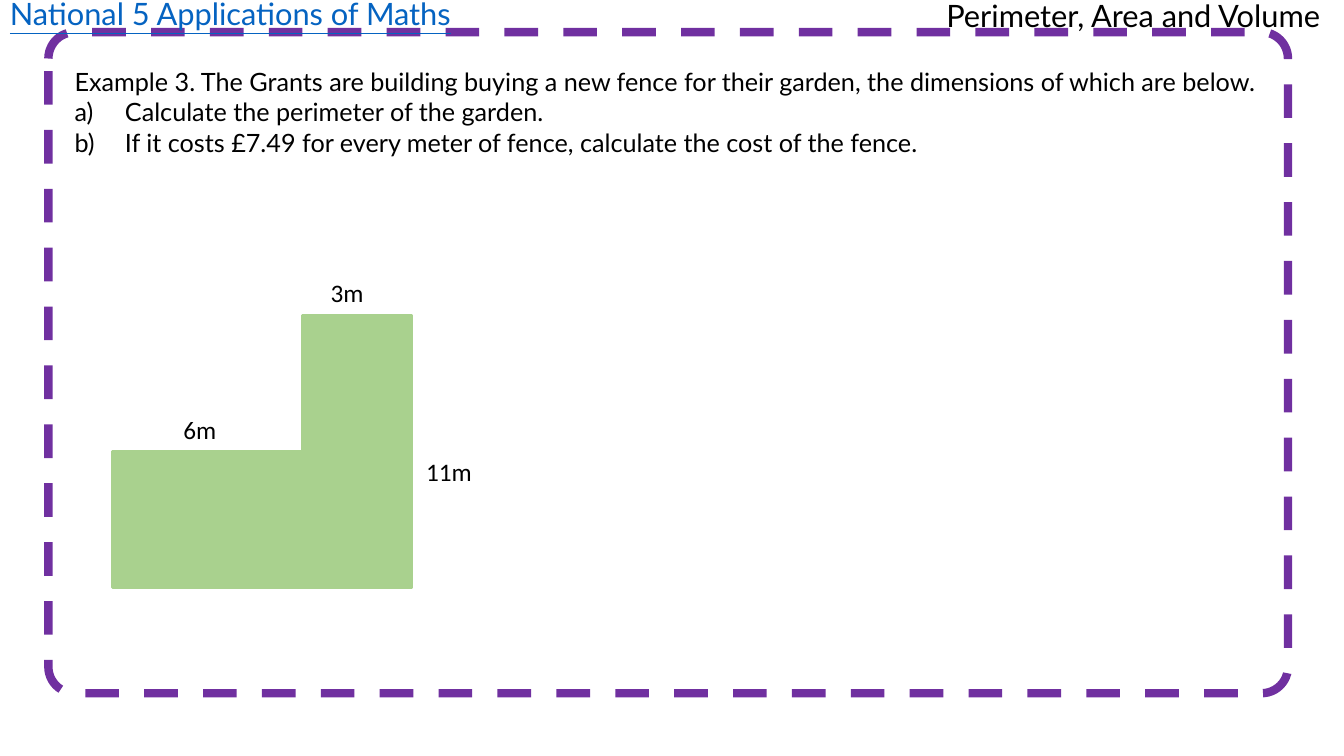
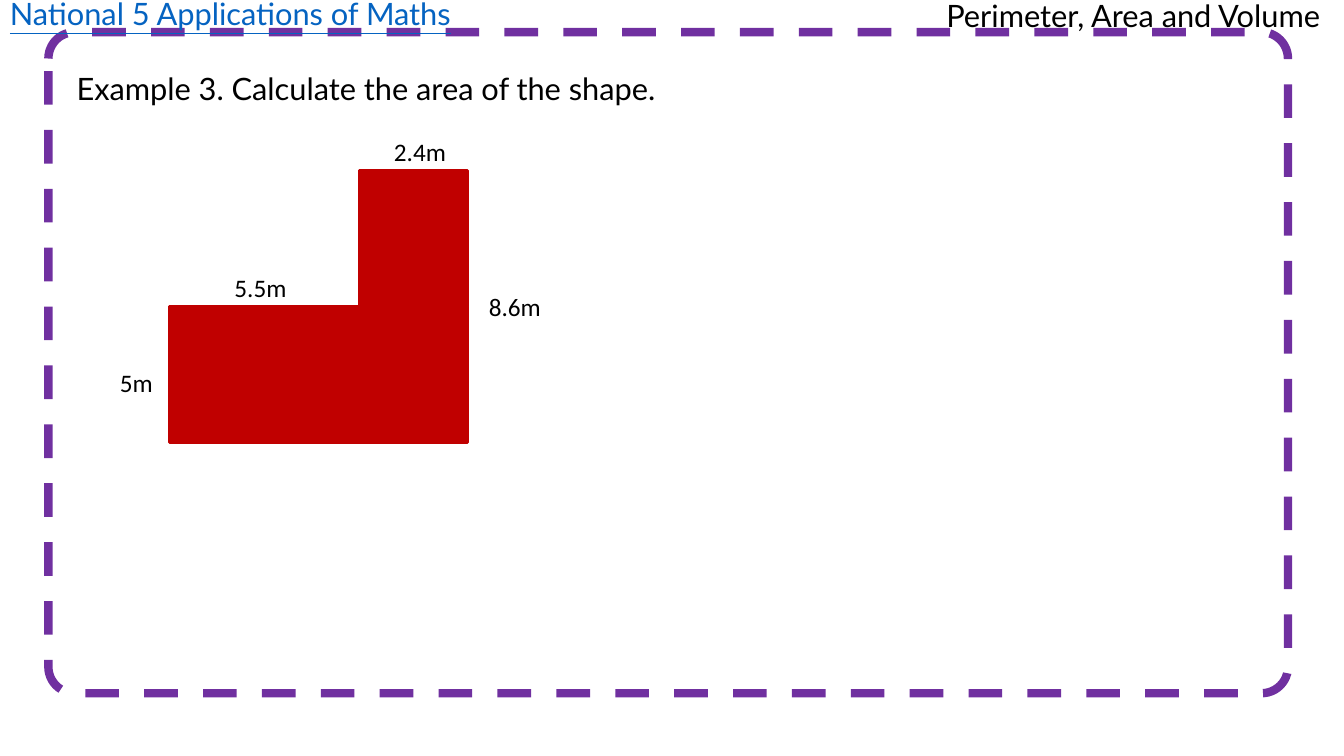
"""Build two worked-example slides on perimeter and area."""
from lxml.etree import SubElement
from pptx import Presentation
from pptx.dml.color import RGBColor
from pptx.enum.dml import MSO_LINE
from pptx.enum.shapes import MSO_SHAPE
from pptx.oxml.ns import qn
from pptx.util import Cm, Pt

COLOURS = {
    "frame": "7030A0",
    "text": "000000",
    "course": "0563C1",
    "garden": "A9D18E",
    "shape": "C00000",
}
HEADING_FONT, LABEL_FONT = "Lato", "Calibri"
HEADING_SIZE, BODY_SIZE = 22, 18
LINE_HEIGHT, LABEL_HEIGHT = 1.19, 1.02
BASE_WIDTH, TOWER_WIDTH, BLOCK_HEIGHT = 7.52, 2.74, 3.43


def colour(name):
    return RGBColor.from_string(COLOURS[name])


def add_text(page, area, lines, size=HEADING_SIZE, font=HEADING_FONT,
             ink="text", underline=None, wrap=False):
    box = page.shapes.add_textbox(*map(Cm, area))
    frame = box.text_frame
    frame.word_wrap = wrap
    frame.text = "\n".join(lines)
    for para in frame.paragraphs:
        for span in para.runs:
            span.font.name = font
            span.font.size = Pt(size)
            span.font.color.rgb = colour(ink)
            span.font.underline = underline
    return box


def number_paragraphs(paragraphs):
    for para in paragraphs:
        properties = para._p.get_or_add_pPr()
        properties.set("marL", str(Cm(1.27)))
        properties.set("indent", str(Cm(-1.27)))
        SubElement(properties, qn("a:buFont"), typeface="+mj-lt")
        SubElement(properties, qn("a:buAutoNum"), type="alphaLcParenR")


def add_block(page, area, fill):
    block = page.shapes.add_shape(MSO_SHAPE.RECTANGLE, *map(Cm, area))
    block.shadow.inherit = False
    block.fill.solid()
    block.fill.fore_color.rgb = colour(fill)
    block.line.color.rgb = colour(fill)
    block.line.width = Pt(2.25)


def add_l_shape(page, left, top, fill, labels):
    tower_left = left + BASE_WIDTH - TOWER_WIDTH
    add_block(page, (left, top + BLOCK_HEIGHT, BASE_WIDTH, BLOCK_HEIGHT), fill)
    add_block(page, (tower_left, top, TOWER_WIDTH, BLOCK_HEIGHT), fill)
    for text, label_left, label_top, width in labels:
        add_text(page, (label_left, label_top, width, LABEL_HEIGHT), [text],
                 BODY_SIZE, LABEL_FONT)


def add_page(deck):
    page = deck.slides.add_slide(deck.slide_layouts[6])
    frame = page.shapes.add_shape(MSO_SHAPE.ROUNDED_RECTANGLE,
                                  Cm(1.22), Cm(0.81), Cm(31.24), Cm(16.66))
    frame.adjustments[0] = 0.04
    frame.shadow.inherit = False
    frame.fill.background()
    frame.line.color.rgb = colour("frame")
    frame.line.width = Pt(6)
    frame.line.dash_style = MSO_LINE.DASH
    add_text(page, (23.6, -0.2, 10.26, LINE_HEIGHT),
             ["Perimeter, Area and Volume"])
    add_text(page, (0, -0.25, 11.76, LINE_HEIGHT),
             ["National 5 Applications of Maths"],
             ink="course", underline=True)
    return page


def build_perimeter_page(deck):
    page = add_page(deck)
    question = add_text(page, (1.63, 1.55, 30.61, 4.27), [
        "Example 3. The Grants are building buying a new fence for their "
        "garden, the dimensions of which are below.",
        "Calculate the perimeter of the garden.",
        "If it costs £7.49 for every meter of fence, calculate the cost of "
        "the fence.",
    ], BODY_SIZE, wrap=True)
    number_paragraphs(question.text_frame.paragraphs[1:])
    add_l_shape(page, 2.84, 7.95, "garden", [
        ("3m", 8.08, 6.86, 1.35),
        ("6m", 4.37, 10.31, 1.35),
        ("11m", 10.49, 11.38, 1.68),
    ])


def build_area_page(deck):
    page = add_page(deck)
    add_text(page, (1.68, 1.63, 16.26, LINE_HEIGHT),
             ["Example 3. Calculate the area of the shape."])
    add_l_shape(page, 4.27, 4.3, "shape", [
        ("2.4m", 9.68, 3.3, 1.83),
        ("5.5m", 5.66, 6.73, 1.83),
        ("8.6m", 12.07, 7.21, 1.83),
        ("5m", 2.77, 9.14, 1.35),
    ])


def main():
    deck = Presentation()
    deck.slide_width, deck.slide_height = Cm(33.87), Cm(19.05)
    build_perimeter_page(deck)
    build_area_page(deck)
    deck.save("out.pptx")


if __name__ == "__main__":
    main()
